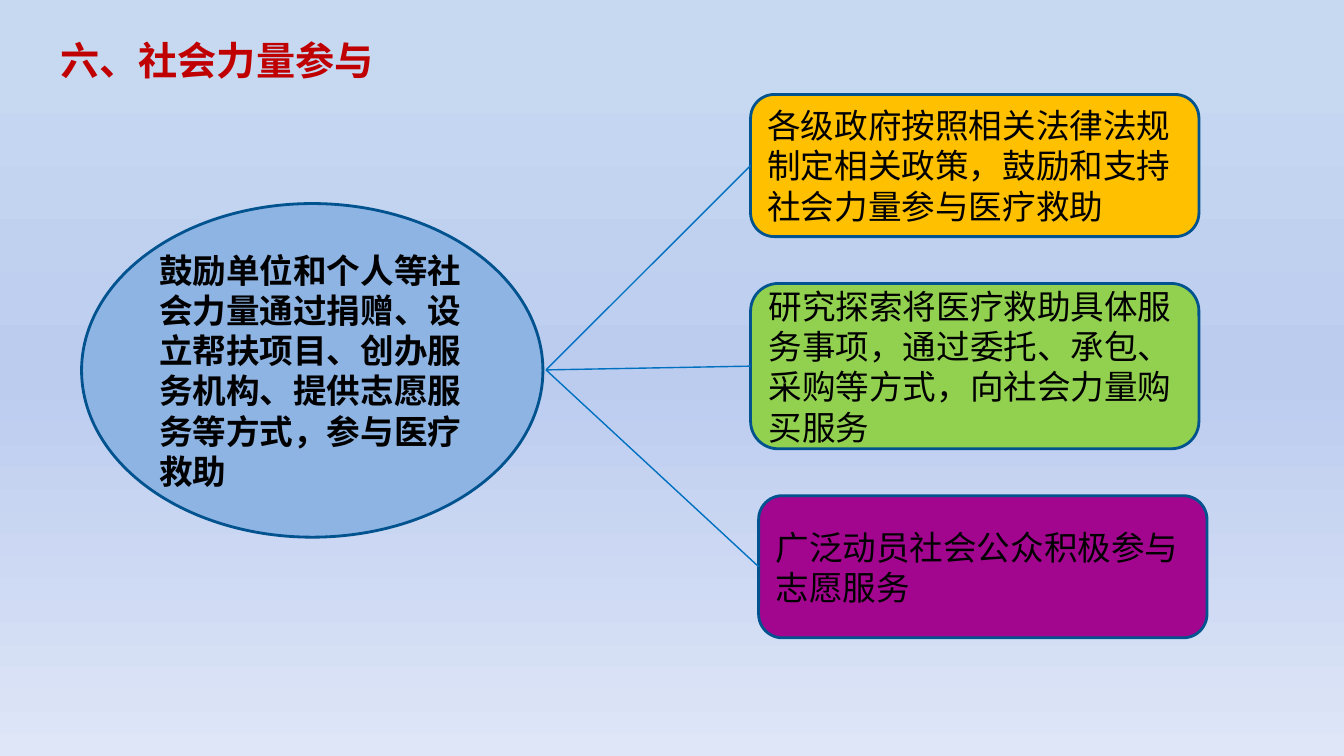
import pptx
import pptx.dml.color
import pptx.enum.shapes
import pptx.enum.text
import pptx.oxml
import pptx.oxml.ns
import pptx.util
import lxml.etree

SHAPES = pptx.enum.shapes.MSO_SHAPE
FONT = "Noto Sans CJK SC"
GRADIENT = [(0, "C6D9F1"), (8, "C6D9F1"), (50, "BCCCEF"), (100, "DEE6F7")]

BOX_LEFT, BOX_WIDTH = 55.85, 33.36
BOX_TOP, BOX_GAP = 12.5, 6.2
# text, fill, height, shift to the right
BOXES = [
    ("各级政府按照相关法律法规制定相关政策，鼓励和支持社会力量参与医疗救助", "FFC000", 18.8, 0),
    ("研究探索将医疗救助具体服务事项，通过委托、承包、采购等方式，向社会力量购买服务", "92D050", 21.87, 0),
    ("广泛动员社会公众积极参与志愿服务", "A2068F", 18.8, 0.6),
]


def color(value):
    return pptx.dml.color.RGBColor.from_string(value)


def add_element(parent, tag, **attributes):
    return lxml.etree.SubElement(parent, pptx.oxml.ns.qn(tag), **attributes)


class SlideBuilder:
    """Draws on one slide; lengths are percentages of the slide's size."""

    def __init__(self, presentation):
        self.width = presentation.slide_width
        self.height = presentation.slide_height
        self.slide = presentation.slides.add_slide(presentation.slide_layouts[5])

    def place(self, left, top, width, height):
        return (self.across(left), self.down(top), self.across(width), self.down(height))

    def across(self, share):
        return round(self.width * share / 100)

    def down(self, share):
        return round(self.height * share / 100)

    def background(self, stops):
        fill = self.slide.background.fill
        fill.gradient()
        fill.gradient_angle = 270
        stop_list = self.slide.element.find(".//" + pptx.oxml.ns.qn("a:gsLst"))
        for stop in list(stop_list):
            stop_list.remove(stop)
        for position, value in stops:
            stop = add_element(stop_list, "a:gs", pos=str(position * 1000))
            add_element(stop, "a:srgbClr", val=value)

    def set_text(self, shape, text, size, value, bold):
        frame = shape.text_frame
        frame.text = text
        frame.vertical_anchor = pptx.enum.text.MSO_ANCHOR.MIDDLE
        paragraph = frame.paragraphs[0]
        paragraph.alignment = pptx.enum.text.PP_ALIGN.LEFT
        font = paragraph.runs[0].font
        font.size = pptx.util.Pt(size)
        font.bold = bold
        font.color.rgb = color(value)
        font.name = FONT
        add_element(paragraph.runs[0]._r.get_or_add_rPr(), "a:ea", typeface=FONT)

    def title(self, text, *area):
        shape = self.slide.shapes.title
        shape.left, shape.top, shape.width, shape.height = self.place(*area)
        self.set_text(shape, text, 28, "C00000", True)
        shape.text_frame.word_wrap = False
        shape.text_frame.auto_size = pptx.enum.text.MSO_AUTO_SIZE.NONE

    def shape(self, kind, text, fill, area, bold=False):
        shape = self.slide.shapes.add_shape(kind, *self.place(*area))
        shape.shadow.inherit = False
        shape.fill.solid()
        shape.fill.fore_color.rgb = color(fill)
        shape.line.color.rgb = color("00538E")
        shape.line.width = pptx.util.Pt(2)
        self.set_text(shape, text, 24, "000000", bold)
        shape.text_frame.word_wrap = True
        return shape

    def line_to(self, box, left, top):
        """Runs from a point to the middle of the box's left side."""
        start = self.across(left), self.down(top)
        line = self.slide.shapes.add_connector(
            pptx.enum.shapes.MSO_CONNECTOR.STRAIGHT, *start, *start)
        line.end_connect(box, 1)
        line.line.color.rgb = color("0070C0")
        line.line.width = pptx.util.Pt(1)
        add_element(line._element.spPr, "a:effectLst")


def main():
    presentation = pptx.Presentation()
    presentation.slide_width = pptx.util.Inches(13.34)
    presentation.slide_height = pptx.util.Inches(7.5)
    builder = SlideBuilder(presentation)
    builder.background(GRADIENT)
    builder.title("六、社会力量参与", 3.75, 4.13, 25.19, 7.6)
    top = BOX_TOP
    for text, fill, height, shift in BOXES:
        box = builder.shape(SHAPES.FLOWCHART_ALTERNATE_PROCESS, text, fill,
                            (BOX_LEFT + shift, top, BOX_WIDTH, height))
        builder.line_to(box, 40.63, 48.93)
        top += height + BOX_GAP
    builder.shape(SHAPES.OVAL,
                  "鼓励单位和个人等社会力量通过捐赠、设立帮扶项目、创办服务机构、提供志愿服务等方式，参与医疗救助",
                  "8EB4E3", (6.07, 26.93, 34.33, 44.13), bold=True)
    presentation.save("out.pptx")


if __name__ == "__main__":
    main()
